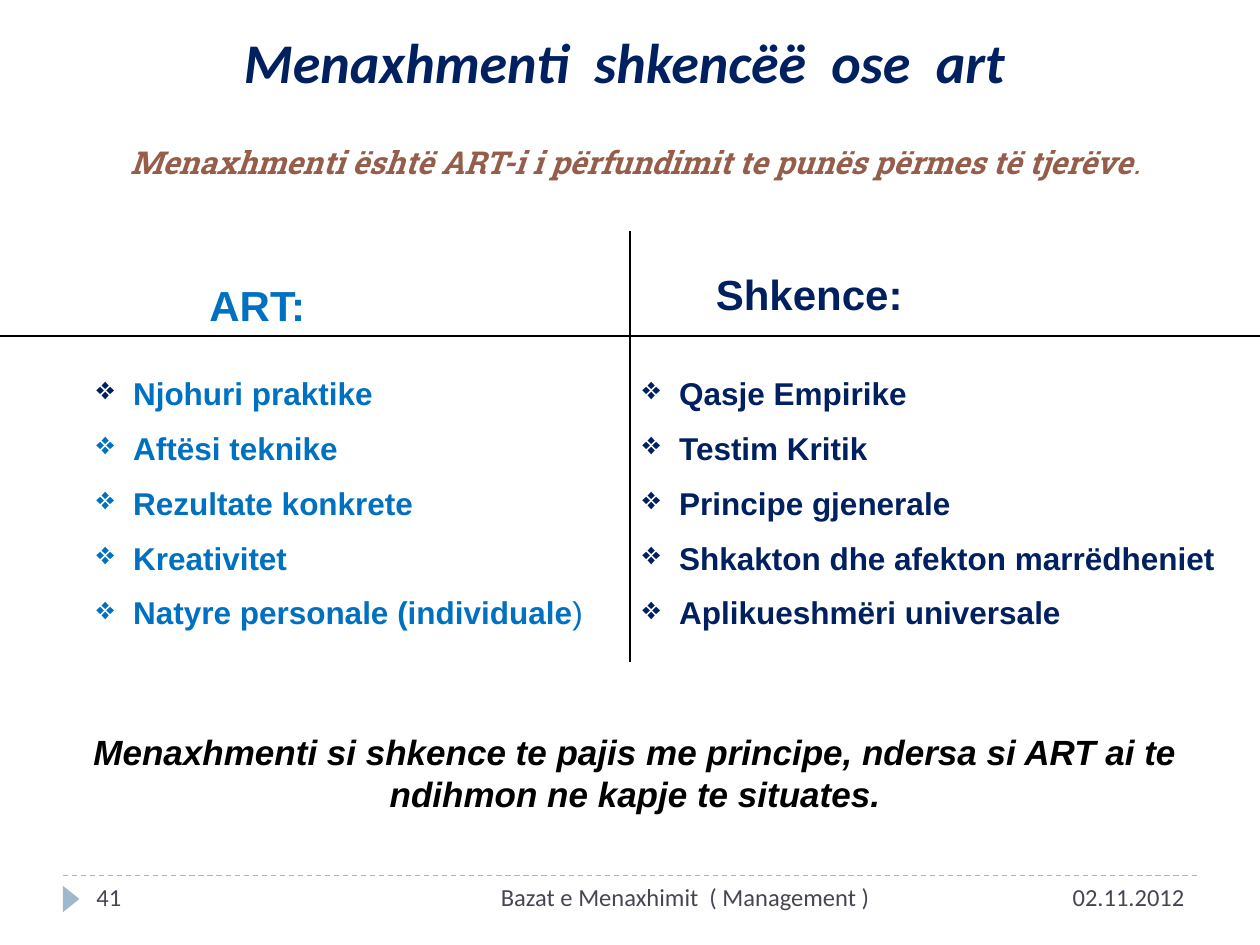
"""Build a slide that compares management as an art and as a science."""
from lxml.etree import SubElement
from pptx import Presentation
from pptx.dml.color import RGBColor
from pptx.enum.dml import MSO_LINE
from pptx.enum.shapes import MSO_CONNECTOR, MSO_SHAPE
from pptx.enum.text import PP_ALIGN
from pptx.oxml.ns import qn
from pptx.util import Pt

COLORS = {
    "navy": "002060",
    "blue": "0070C0",
    "brown": "955E4B",
    "black": "000000",
    "footer": "464653",
    "accent": "9FB8CD",
}
ART = ["Njohuri praktike", "Aftësi teknike", "Rezultate konkrete",
       "Kreativitet", "Natyre personale (individuale)"]
SCIENCE = ["Qasje Empirike", "Testim Kritik", "Principe gjenerale",
           "Shkakton dhe afekton marrëdheniet", "Aplikueshmëri universale"]


def rgb(name):
    """Return the named palette colour."""
    return RGBColor.from_string(COLORS[name])


def style_run(r, size, color, font="Arial", bold=True, italic=False):
    """Set the font of one run."""
    r.font.name = font
    r.font.size = Pt(size)
    r.font.bold = bold
    r.font.italic = italic
    r.font.color.rgb = rgb(color)


def add_text(s, box, lines, size, color, align=PP_ALIGN.LEFT, **style):
    """Add a wrapped text box with one paragraph per line."""
    tf = s.shapes.add_textbox(*map(Pt, box)).text_frame
    tf.word_wrap = True
    tf.text = "\n".join(lines)
    for i, p in enumerate(tf.paragraphs):
        p.alignment = align
        p.space_before = Pt(9.8 if i else 0)
        style_run(p.runs[0], size, color, **style)
    return tf


def add_bullets(s, box, items, color):
    """Add a list with diamond bullets, the first of them navy."""
    tf = add_text(s, box, items, 18, color)
    for i, p in enumerate(tf.paragraphs):
        pPr = p._p.get_or_add_pPr()
        pPr.set("marL", str(Pt(21)))
        pPr.set("indent", str(-Pt(21)))
        clr = SubElement(pPr, qn("a:buClr"))
        SubElement(clr, qn("a:srgbClr")).set("val", COLORS[color if i else "navy"])
        SubElement(pPr, qn("a:buChar")).set("char", "❖")
    return tf


def split_last(p):
    """Move the last character of a paragraph into a run that is not bold."""
    r = p.runs[0]
    last = p.add_run()
    last.text = r.text[-1]
    r.text = r.text[:-1]
    style_run(last, r.font.size.pt, "black", r.font.name, False, r.font.italic)
    last.font.color.rgb = r.font.color.rgb


def add_line(s, start, end, color, dash=None):
    """Add a thin straight line without a shadow."""
    line = s.shapes.add_connector(MSO_CONNECTOR.STRAIGHT, *map(Pt, start + end))
    line.line.color.rgb = rgb(color)
    line.line.width = Pt(0.75)
    if dash:
        line.line.dash_style = dash
    SubElement(line._element.spPr, qn("a:effectLst"))


def add_marker(s, box):
    """Add the triangle that points at the page number."""
    sp = s.shapes.add_shape(MSO_SHAPE.ISOSCELES_TRIANGLE, *map(Pt, box))
    sp.rotation = 90
    sp.shadow.inherit = False
    sp.fill.solid()
    sp.fill.fore_color.rgb = rgb("accent")
    sp.line.fill.background()


def add_footer(s):
    """Add the dashed rule, marker, page number, course name and date."""
    add_line(s, (36, 500.4), (684, 500.4), "accent", MSO_LINE.DASH)
    add_marker(s, (33.1, 509, 15.1, 9.4))
    for left, width, text, align in (
        (504, 180, "02.11.2012", PP_ALIGN.RIGHT),
        (48, 156, "41", PP_ALIGN.LEFT),
        (228, 276, "Bazat e Menaxhimit  ( Management )", PP_ALIGN.RIGHT),
    ):
        add_text(s, (left, 500.4, width, 28.8), [text], 14, "footer", align,
                 font="Calibri", bold=False)


def main():
    """Create the slide and save it."""
    prs = Presentation()
    prs.slide_width, prs.slide_height = Pt(720), Pt(540)
    s = prs.slides.add_slide(prs.slide_layouts[6])
    center = PP_ALIGN.CENTER

    add_footer(s)
    add_text(s, (84, 12, 546, 46), ["Menaxhmenti  shkencëë  ose  art"], 32, "navy",
             center, font="Calibri", italic=True)
    tf = add_text(s, (24, 78, 678, 29),
                  ["Menaxhmenti është ART-i i përfundimit te punës përmes të tjerëve."],
                  18, "brown", center, font="Roboto Slab", italic=True)
    split_last(tf.paragraphs[0])

    add_text(s, (42, 156, 210, 36), ["ART:"], 24, "blue", center)
    add_text(s, (402, 150, 294, 36), ["Shkence:"], 24, "navy")
    add_line(s, (360, 132), (360, 378), "black")
    add_line(s, (0, 192), (720, 192), "black")
    tf = add_bullets(s, (48, 210, 294, 160), ART, "blue")
    split_last(tf.paragraphs[-1])
    add_bullets(s, (360, 210, 348, 160), SCIENCE, "navy")

    add_text(s, (24, 414, 678, 55.5),
             ["Menaxhmenti si shkence te pajis me principe, ndersa si ART ai te "
              "ndihmon ne kapje te situates."], 20, "black", center, italic=True)
    prs.save("out.pptx")


if __name__ == "__main__":
    main()
